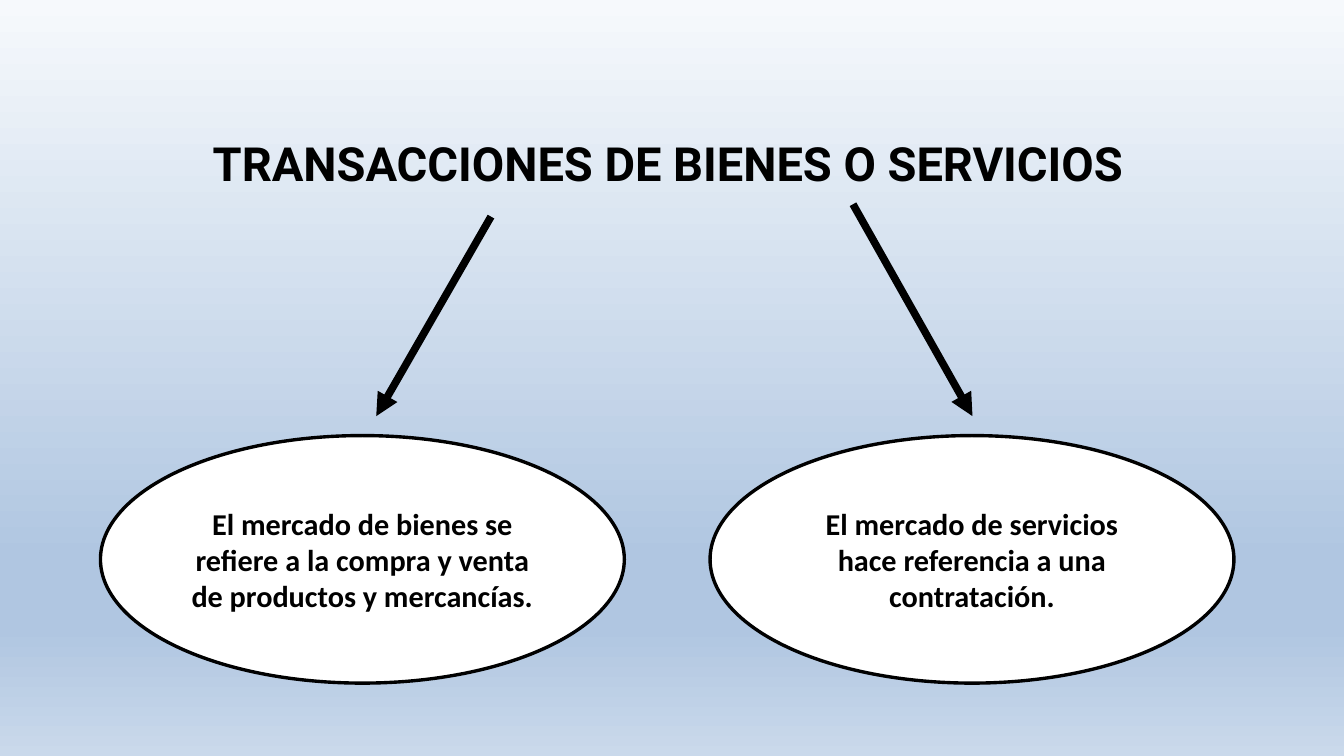
from copy import deepcopy

from lxml import etree
from pptx import Presentation
from pptx.dml.color import RGBColor
from pptx.enum.shapes import MSO_CONNECTOR, MSO_SHAPE
from pptx.enum.text import MSO_ANCHOR, PP_ALIGN
from pptx.oxml.ns import qn
from pptx.util import Cm, Pt

STRAIGHT = MSO_CONNECTOR.STRAIGHT
OVAL = MSO_SHAPE.OVAL
MIDDLE = MSO_ANCHOR.MIDDLE
CENTER = PP_ALIGN.CENTER
TITLE_ONLY = 5

BLACK = "000000"
WHITE = "FFFFFF"
SKY = [(0, "F6F9FC"), (0.74, "B0C6E1"), (0.83, "B0C6E1"), (1, "CAD9EB")]

MARKET_WIDTH, MARKET_HEIGHT = 11, 5.2
ARROW_END = 4.45
MARKETS = [
    ("El mercado de bienes se refiere a la compra y venta de productos y mercancías.",
     (8.2, 0.26), 5.79),
    ("El mercado de servicios hace referencia a una contratación.",
     (15.8, 0), 18.31),
]


def rgb(value):
    return RGBColor.from_string(value)


def write(frame, text, font_name, size):
    frame.text = text
    frame.word_wrap = True
    frame.vertical_anchor = MIDDLE
    paragraph = frame.paragraphs[0]
    paragraph.alignment = CENTER
    font = paragraph.runs[0].font
    font.name = font_name
    font.size = Pt(size)
    font.bold = True
    font.color.rgb = rgb(BLACK)


def paint_background(slide):
    fill = slide.background.fill
    fill.gradient()
    fill.gradient_angle = 270
    stops = slide.element.find(".//" + qn("a:gsLst"))
    for _ in range(len(SKY) - len(stops)):
        stops.append(deepcopy(stops[0]))
    for stop, (position, color) in zip(fill.gradient_stops, SKY):
        stop.position = position
        stop.color.rgb = rgb(color)


def place_heading(slide, left, top, width, height):
    heading = slide.shapes.title
    heading.left, heading.top = Cm(left), Cm(top)
    heading.width, heading.height = Cm(width), Cm(height)
    write(heading.text_frame, "TRANSACCIONES DE BIENES O SERVICIOS", "Roboto", 28)


def add_arrow(slide, x1, y1, x2, y2):
    arrow = slide.shapes.add_connector(STRAIGHT, Cm(x1), Cm(y1), Cm(x2), Cm(y2))
    arrow.line.color.rgb = rgb(BLACK)
    arrow.line.width = Pt(4.5)
    etree.SubElement(arrow.line._get_or_add_ln(), qn("a:tailEnd"), type="triangle")
    etree.SubElement(arrow.element.spPr, qn("a:effectLst"))


def add_market(slide, text, left, top):
    market = slide.shapes.add_shape(
        OVAL, Cm(left), Cm(top), Cm(MARKET_WIDTH), Cm(MARKET_HEIGHT))
    market.shadow.inherit = False
    market.fill.solid()
    market.fill.fore_color.rgb = rgb(WHITE)
    market.line.color.rgb = rgb(BLACK)
    market.line.width = Pt(2)
    write(market.text_frame, text, "Calibri", 18)


def place_markets(slide, left, top, width, height):
    step = (width - MARKET_WIDTH) / (len(MARKETS) - 1)
    for index, (text, (start_x, start_y), end_x) in enumerate(MARKETS):
        add_arrow(slide, left + start_x, top + start_y, left + end_x, top + ARROW_END)
        add_market(slide, text, left + index * step, top + height - MARKET_HEIGHT)


def main():
    deck = Presentation()
    deck.slide_width, deck.slide_height = Cm(28.22), Cm(15.88)
    slide = deck.slides.add_slide(deck.slide_layouts[TITLE_ONLY])
    paint_background(slide)
    place_heading(slide, 1.32, 2.54, 25.4, 1.75)
    place_markets(slide, 2.11, 4.29, 23.8, 10.06)
    deck.save("out.pptx")


if __name__ == "__main__":
    main()
